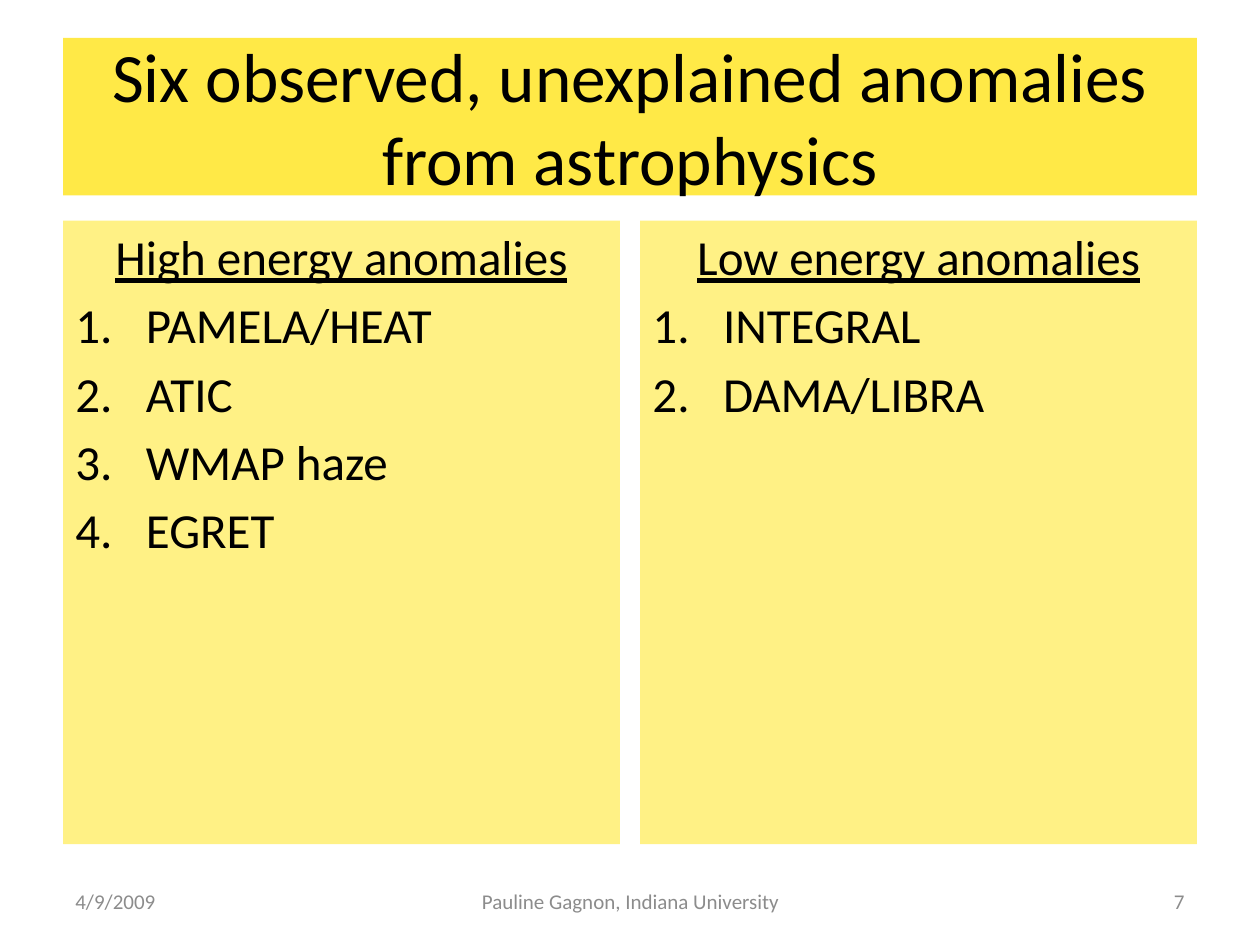
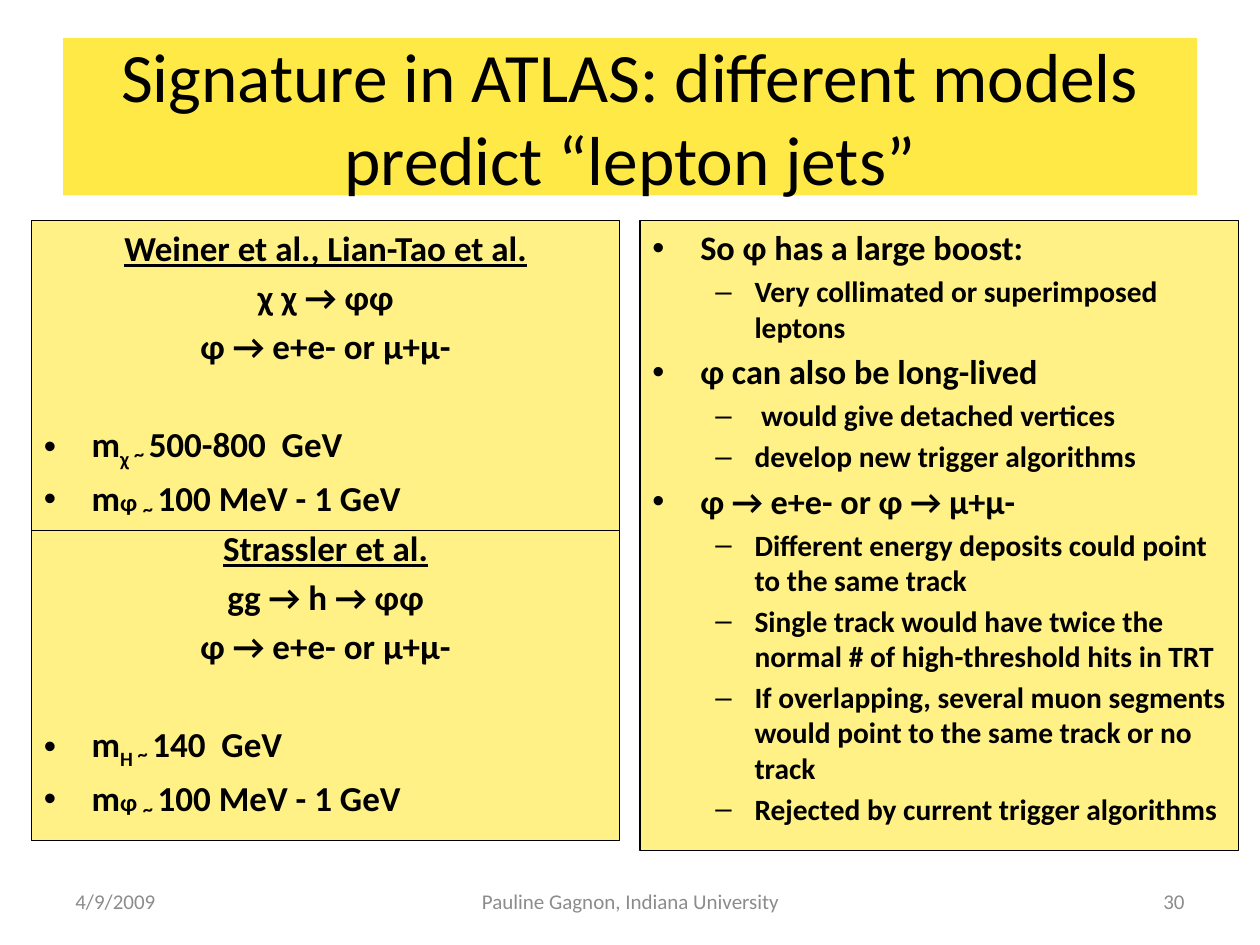
"""Build two slides on astrophysics anomalies and lepton jets."""
from dataclasses import dataclass
from enum import Enum

import lxml.etree
import pptx
import pptx.dml.color
import pptx.enum.shapes
import pptx.enum.text
import pptx.oxml.ns
import pptx.util

Inches = pptx.util.Inches
Pt = pptx.util.Pt
Align = pptx.enum.text.PP_ALIGN
Anchor = pptx.enum.text.MSO_ANCHOR

COLORS = {"title": "FFE947", "panel": "FFF185", "ink": "000000", "footer": "8C8C8C"}
FONT = "Calibri"
TITLE_ONLY = 5
PANEL_TOP = 1.75
SPACE_SHARE = 0.19
BLANK_LINE = 1.42


class Marker(Enum):
    NONE = ""
    NUMBER = "arabicPeriod"
    DOT = "•"
    DASH = "–"


INDENTS = {Marker.NUMBER: (0.56, 0.56), Marker.DOT: (0.38, 0.38), Marker.DASH: (0.81, 0.31)}


@dataclass(frozen=True)
class Fragment:
    text: str
    size: float | None = None
    baseline: int = 0


@dataclass(frozen=True)
class Line:
    fragments: tuple[Fragment, ...]
    marker: Marker = Marker.NONE
    size: float | None = None
    underline: bool = False
    gap_before: bool = False


@dataclass(frozen=True)
class Panel:
    left: float
    width: float
    height: float
    size: float
    lines: list[Line]
    bold: bool = False
    outlined: bool = False


@dataclass(frozen=True)
class FooterPart:
    left: float
    width: float
    align: Align


FOOTER_PARTS = (
    FooterPart(0.5, 2.33, Align.LEFT),
    FooterPart(3.42, 3.17, Align.CENTER),
    FooterPart(7.17, 2.33, Align.RIGHT),
)


def heading(text: str) -> Line:
    return Line((Fragment(text),), underline=True)


def formula(text: str) -> Line:
    return Line((Fragment(text),))


def numbered(*names: str) -> list[Line]:
    return [Line((Fragment(name),), Marker.NUMBER) for name in names]


def point(text: str) -> Line:
    return Line((Fragment(text),), Marker.DOT)


def detail(text: str) -> Line:
    return Line((Fragment(text),), Marker.DASH, size=16.8)


def mass(particle: Fragment, value: str, gap_before: bool = False) -> Line:
    parts = (Fragment("m"), particle, Fragment("~ ", baseline=-12), Fragment(value))
    return Line(parts, Marker.DOT, gap_before=gap_before)


def model(name: str, process: str, heavy: str, heavy_mass: str) -> list[Line]:
    return [
        heading(name),
        formula(process),
        formula("φ → e+e- or μ+μ-"),
        mass(Fragment(heavy, baseline=-25), heavy_mass, gap_before=True),
        mass(Fragment("φ ", size=14), "100 MeV - 1 GeV"),
    ]


ANOMALY_PANELS = [
    Panel(0.5, 4.42, 4.95, 28,
          [heading("High energy anomalies"),
           *numbered("PAMELA/HEAT", "ATIC", "WMAP haze", "EGRET")]),
    Panel(5.08, 4.42, 4.95, 28,
          [heading("Low energy anomalies"), *numbered("INTEGRAL", "DAMA/LIBRA")]),
]

MODELS_PANEL = Panel(
    0.25, 4.67, 4.92, 20,
    [*model("Weiner et al., Lian-Tao et al.", "χ χ → φφ", "χ ", "500-800  GeV"),
     *model("Strassler et al.", "gg → h → φφ", "H ", "140  GeV")],
    bold=True, outlined=True)

SIGNATURE_PANEL = Panel(
    5.08, 4.75, 5, 19.6,
    [point("So φ has a large boost:"),
     detail("Very collimated or superimposed leptons"),
     point("φ can also be long-lived"),
     detail(" would give detached vertices"),
     detail("develop new trigger algorithms"),
     point("φ → e+e- or φ → μ+μ-"),
     detail("Different energy deposits could point to the same track"),
     detail("Single track would have twice the normal # of high-threshold hits in TRT"),
     detail("If overlapping, several muon segments would point to the same track or no track"),
     detail("Rejected by current trigger algorithms")],
    bold=True, outlined=True)


def color(name: str) -> pptx.dml.color.RGBColor:
    return pptx.dml.color.RGBColor.from_string(COLORS[name])


def format_run(run, size: float, ink: str = "ink", bold: bool = False,
               underline: bool = False) -> None:
    run.font.name = FONT
    run.font.size = Pt(size)
    run.font.color.rgb = color(ink)
    run.font.bold = bold
    run.font.underline = underline


def set_marker(paragraph, marker: Marker) -> None:
    properties = paragraph._p.get_or_add_pPr()
    margin, hanging = INDENTS[marker]
    properties.set("marL", str(Inches(margin)))
    properties.set("indent", str(-Inches(hanging)))
    qualify = pptx.oxml.ns.qn
    if marker is Marker.NUMBER:
        lxml.etree.SubElement(properties, qualify("a:buFont"), typeface="+mj-lt")
        lxml.etree.SubElement(properties, qualify("a:buAutoNum"), type=marker.value)
    else:
        lxml.etree.SubElement(properties, qualify("a:buFont"), typeface="Arial")
        lxml.etree.SubElement(properties, qualify("a:buChar"), char=marker.value)


def write_line(paragraph, line: Line, panel: Panel) -> None:
    size = line.size or panel.size
    blank = BLANK_LINE if line.gap_before else 0
    paragraph.space_before = Pt(size * (SPACE_SHARE + blank))
    paragraph.alignment = Align.LEFT if line.marker.value else Align.CENTER
    if line.marker is Marker.DASH:
        paragraph.level = 1
    if line.marker.value:
        set_marker(paragraph, line.marker)
    for fragment in line.fragments:
        run = paragraph.add_run()
        run.text = fragment.text
        format_run(run, fragment.size or size, bold=panel.bold, underline=line.underline)
        if fragment.baseline:
            run._r.get_or_add_rPr().set("baseline", str(fragment.baseline * 1000))


def add_panel(slide, panel: Panel):
    shape = slide.shapes.add_shape(
        pptx.enum.shapes.MSO_SHAPE.RECTANGLE, Inches(panel.left), Inches(PANEL_TOP),
        Inches(panel.width), Inches(panel.height))
    shape.shadow.inherit = False
    shape.fill.solid()
    shape.fill.fore_color.rgb = color("panel")
    if panel.outlined:
        shape.line.color.rgb = color("ink")
        shape.line.width = Pt(0.75)
    else:
        shape.line.fill.background()
    text_frame = shape.text_frame
    text_frame.word_wrap = True
    text_frame.vertical_anchor = Anchor.TOP
    for index, line in enumerate(panel.lines):
        paragraph = text_frame.add_paragraph() if index else text_frame.paragraphs[0]
        write_line(paragraph, line, panel)
    return shape


def add_divider(slide, shape) -> None:
    connector = slide.shapes.add_connector(
        pptx.enum.shapes.MSO_CONNECTOR.STRAIGHT, 0, 0, 0, 0)
    connector.begin_connect(shape, 1)
    connector.end_connect(shape, 3)
    connector.line.color.rgb = color("ink")
    connector.line.width = Pt(0.75)
    lxml.etree.SubElement(connector._element.spPr, pptx.oxml.ns.qn("a:effectLst"))


def add_footer(slide, number: int) -> None:
    texts = ("4/9/2009", "Pauline Gagnon, Indiana University", str(number))
    for part, text in zip(FOOTER_PARTS, texts):
        shape = slide.shapes.add_textbox(
            Inches(part.left), Inches(6.95), Inches(part.width), Inches(0.4))
        text_frame = shape.text_frame
        text_frame.word_wrap = True
        text_frame.vertical_anchor = Anchor.MIDDLE
        text_frame.text = text
        paragraph = text_frame.paragraphs[0]
        paragraph.alignment = part.align
        format_run(paragraph.runs[0], 12, "footer")


def add_titled_slide(presentation, title: str, number: int):
    slide = presentation.slides.add_slide(presentation.slide_layouts[TITLE_ONLY])
    shape = slide.shapes.title
    shape.left, shape.top = Inches(0.5), Inches(0.3)
    shape.width, shape.height = Inches(9), Inches(1.25)
    shape.fill.solid()
    shape.fill.fore_color.rgb = color("title")
    text_frame = shape.text_frame
    text_frame.text = title
    text_frame.auto_size = pptx.enum.text.MSO_AUTO_SIZE.NONE
    text_frame.vertical_anchor = Anchor.MIDDLE
    paragraph = text_frame.paragraphs[0]
    paragraph.alignment = Align.CENTER
    format_run(paragraph.runs[0], 39.6)
    add_footer(slide, number)
    return slide


def main() -> None:
    presentation = pptx.Presentation()
    presentation.slide_width, presentation.slide_height = Inches(10), Inches(7.5)

    anomalies = add_titled_slide(
        presentation, "Six observed, unexplained anomalies from astrophysics", 7)
    for panel in ANOMALY_PANELS:
        add_panel(anomalies, panel)

    signature = add_titled_slide(
        presentation, "Signature in ATLAS: different models predict “lepton jets”", 30)
    models = add_panel(signature, MODELS_PANEL)
    add_panel(signature, SIGNATURE_PANEL)
    add_divider(signature, models)

    presentation.save("out.pptx")


if __name__ == "__main__":
    main()
